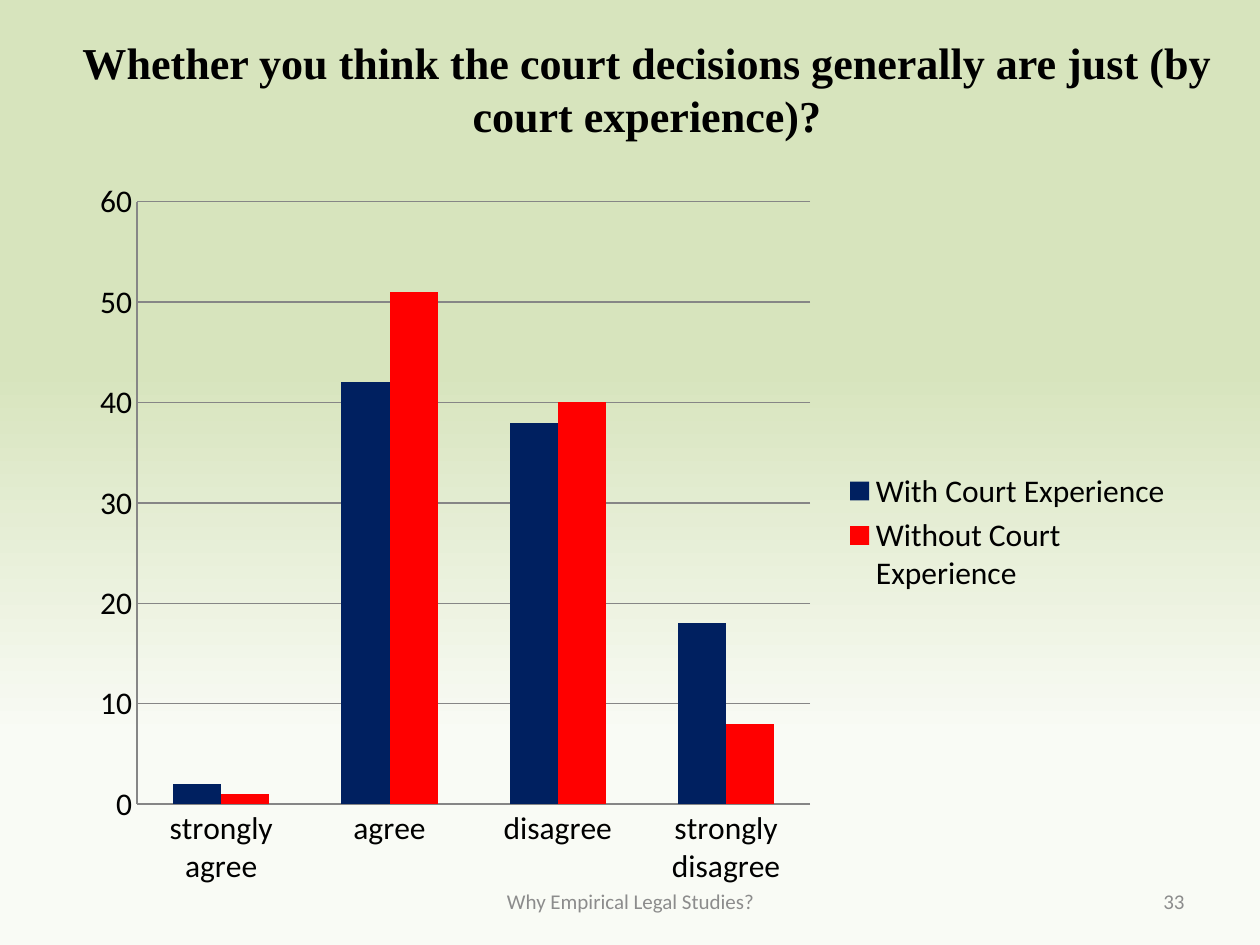
from lxml import etree
from pptx import Presentation
from pptx.chart.data import CategoryChartData
from pptx.dml.color import RGBColor
from pptx.enum.chart import XL_CHART_TYPE, XL_LEGEND_POSITION, XL_TICK_MARK
from pptx.enum.text import MSO_ANCHOR, PP_ALIGN
from pptx.oxml.ns import qn
from pptx.util import Inches, Pt

CENTER, RIGHT = PP_ALIGN.CENTER, PP_ALIGN.RIGHT
MIDDLE = MSO_ANCHOR.MIDDLE
CLUSTERED = XL_CHART_TYPE.COLUMN_CLUSTERED
LEGEND_RIGHT = XL_LEGEND_POSITION.RIGHT
NO_TICK = XL_TICK_MARK.NONE

WIDTH, HEIGHT = Inches(10), Inches(7.5)
BODY_FONT, TITLE_FONT = "Calibri", "Times New Roman"
COLORS = {
    "green": "D7E4BD",
    "pale": "F9FBF5",
    "text": "000000",
    "footer": "8C8C8C",
    "axis": "868686",
    "with": "002060",
    "without": "FF0000",
}
CATEGORIES = ["strongly agree", "agree", "disagree", "strongly disagree"]
SERIES = [
    ("With Court Experience", (2, 42, 38, 18), "with"),
    ("Without Court Experience", (1, 51, 40, 8), "without"),
]
PLOT_AREA = {"x": 0.05, "y": 0.05, "w": 0.61, "h": 0.82}


def color(name):
    return RGBColor.from_string(COLORS[name])


def format_font(font, name, size, color_name, bold=False):
    font.name, font.size, font.bold = name, Pt(size), bold
    font.color.rgb = color(color_name)


def fill_text(shape, text, alignment, *font_settings):
    frame = shape.text_frame
    frame.text = text
    frame.word_wrap = True
    frame.vertical_anchor = MIDDLE
    paragraph = frame.paragraphs[0]
    paragraph.alignment = alignment
    format_font(paragraph.runs[0].font, *font_settings)


def paint_background(slide):
    fill = slide.background.fill
    fill.gradient()
    fill.gradient_angle = 270
    for stop, position, name in zip(fill.gradient_stops, (0.39, 0.78), ("green", "pale")):
        stop.position = position
        stop.color.rgb = color(name)


def add_title(slide, text):
    title = slide.shapes.title
    title.left, title.top = Inches(0.47), Inches(0.21)
    title.width, title.height = Inches(9.33), Inches(0.99)
    fill_text(title, text, CENTER, TITLE_FONT, 25.2, "text", True)


def add_footer(slide, text, left, width, alignment):
    box = slide.shapes.add_textbox(Inches(left), Inches(6.95), Inches(width), Inches(0.4))
    fill_text(box, text, alignment, BODY_FONT, 12, "footer")


def place_plot_area(chart):
    plot_area = chart.plots[0]._element.getparent()
    for old_layout in plot_area.findall(qn("c:layout")):
        plot_area.remove(old_layout)
    layout = etree.Element(qn("c:layout"))
    manual = etree.SubElement(layout, qn("c:manualLayout"))
    settings = {"layoutTarget": "inner", "xMode": "edge", "yMode": "edge", **PLOT_AREA}
    for tag, value in settings.items():
        etree.SubElement(manual, qn(f"c:{tag}")).set("val", str(value))
    plot_area.insert(0, layout)


def format_axes(chart):
    value_axis = chart.value_axis
    value_axis.minimum_scale, value_axis.maximum_scale = 0, 60
    value_axis.major_unit = 10
    value_axis.has_major_gridlines = True
    axes = (chart.category_axis, value_axis)
    for axis in axes:
        axis.major_tick_mark = axis.minor_tick_mark = NO_TICK
    for lines in (*axes, value_axis.major_gridlines):
        lines.format.line.color.rgb = color("axis")
        lines.format.line.width = Pt(0.75)


def add_chart(slide):
    data = CategoryChartData()
    data.categories = CATEGORIES
    for name, values, _ in SERIES:
        data.add_series(name, values)
    frame = slide.shapes.add_chart(
        CLUSTERED, Inches(0.65), Inches(1.31), Inches(8.76), Inches(5.83), data
    )
    chart = frame.chart
    chart.has_title = False
    format_font(chart.font, BODY_FONT, 18, "text")
    chart.has_legend = True
    chart.legend.position = LEGEND_RIGHT
    chart.legend.include_in_layout = False
    plot = chart.plots[0]
    plot.gap_width, plot.overlap = 150, 0
    plot.vary_by_categories = False
    for series, (_, _, color_name) in zip(plot.series, SERIES):
        series.format.fill.solid()
        series.format.fill.fore_color.rgb = color(color_name)
    format_axes(chart)
    place_plot_area(chart)


def main():
    presentation = Presentation()
    presentation.slide_width, presentation.slide_height = WIDTH, HEIGHT
    slide = presentation.slides.add_slide(presentation.slide_layouts[5])
    paint_background(slide)
    add_chart(slide)
    add_title(
        slide,
        "Whether you think the court decisions generally are just (by court experience)?",
    )
    add_footer(slide, "Why Empirical Legal Studies?", 3.42, 3.17, CENTER)
    add_footer(slide, "33", 7.17, 2.33, RIGHT)
    presentation.save("out.pptx")


if __name__ == "__main__":
    main()
